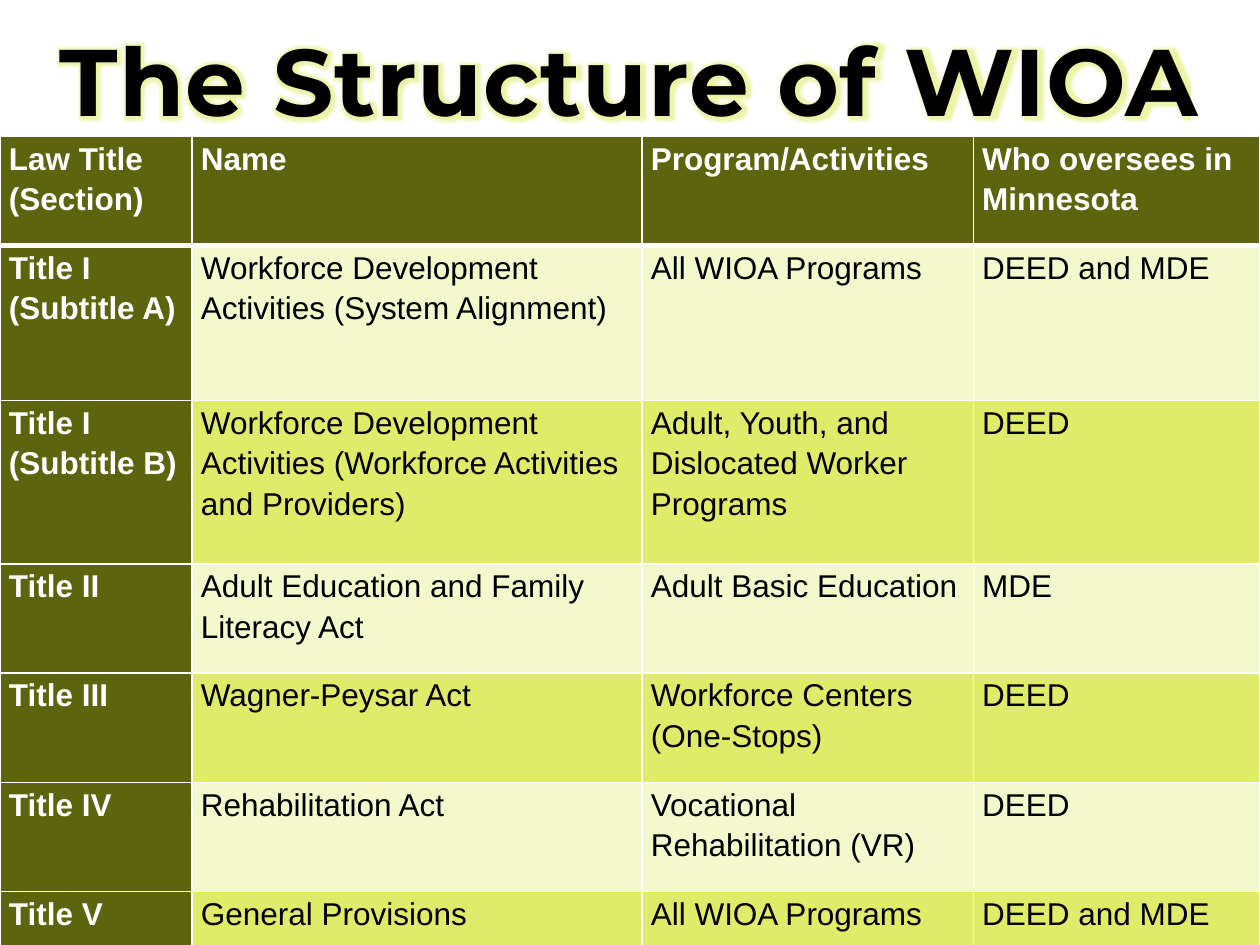
from dataclasses import dataclass

from lxml.etree import SubElement
from pptx import Presentation
from pptx.dml.color import RGBColor
from pptx.enum.text import MSO_ANCHOR, PP_ALIGN
from pptx.oxml.ns import qn
from pptx.util import Cm, Pt


@dataclass(frozen=True)
class Theme:
    title_font: str = "Montserrat"
    body_font: str = "Arial"
    title_size: float = 54
    body_size: float = 18
    line_spacing: float = 1.15
    black: str = "000000"
    white: str = "FFFFFF"
    olive: str = "5C650D"
    pale: str = "F4F9CD"
    lime: str = "DFEC69"


THEME = Theme()

COLUMN_WIDTHS = [3.87, 9.07, 6.68, 5.78]
ROW_HEIGHTS = [2.2, 3.12, 3.3, 2.2, 2.2, 2.2, 1.09]
ROWS = [
    ["Law Title (Section)", "Name", "Program/Activities", "Who oversees in Minnesota"],
    ["Title I (Subtitle A)", "Workforce Development Activities (System Alignment)",
     "All WIOA Programs", "DEED and MDE"],
    ["Title I (Subtitle B)",
     "Workforce Development Activities (Workforce Activities and Providers)",
     "Adult, Youth, and Dislocated Worker Programs", "DEED"],
    ["Title II", "Adult Education and Family Literacy Act", "Adult Basic Education", "MDE"],
    ["Title III", "Wagner-Peysar Act", "Workforce Centers (One-Stops)", "DEED"],
    ["Title IV", "Rehabilitation Act", "Vocational Rehabilitation (VR)", "DEED"],
    ["Title V", "General Provisions", "All WIOA Programs", "DEED and MDE"],
]


def add_span(para, text, font, size, color, bold):
    span = para.add_run()
    span.text = text
    span.font.name = font
    span.font.size = Pt(size)
    span.font.bold = bold
    span.font.color.rgb = RGBColor.from_string(color)
    return span


def add_glow(span, color, radius):
    """Put a soft glow right after the text fill, where the schema wants it."""
    properties = span.font._element if hasattr(span.font, "_element") else span._r.get_or_add_rPr()
    effects = SubElement(properties, qn("a:effectLst"))
    glow = SubElement(effects, qn("a:glow"), rad=str(Pt(radius)))
    tint = SubElement(glow, qn("a:srgbClr"), val=color)
    SubElement(tint, qn("a:alpha"), val="60000")
    properties.find(qn("a:solidFill")).addnext(effects)


def add_title(page, text):
    box = page.shapes.add_textbox(0, 0, Cm(25.4), Cm(3.18))
    frame = box.text_frame
    frame.word_wrap = True
    frame.vertical_anchor = MSO_ANCHOR.MIDDLE
    para = frame.paragraphs[0]
    para.alignment = PP_ALIGN.CENTER
    span = add_span(para, text, THEME.title_font, THEME.title_size, THEME.black, True)
    span._r.get_or_add_rPr().set("spc", "50")
    add_glow(span, THEME.lime, 8)


def set_borders(cell, bottom_width):
    properties = cell._tc.get_or_add_tcPr()
    for side, width in (("L", 1), ("R", 1), ("T", 1), ("B", bottom_width)):
        line = SubElement(properties, qn(f"a:ln{side}"), w=str(Pt(width)))
        fill = SubElement(line, qn("a:solidFill"))
        SubElement(fill, qn("a:srgbClr"), val=THEME.white)


def fill_cell(cell, text, row, column):
    is_heading = row == 0 or column == 0
    band = THEME.pale if row % 2 else THEME.lime
    cell.margin_left = cell.margin_right = Cm(0.18)
    cell.margin_top = cell.margin_bottom = 0
    # Borders come before the fill in the cell properties
    set_borders(cell, 3 if row == 0 else 1)
    cell.fill.solid()
    cell.fill.fore_color.rgb = RGBColor.from_string(THEME.olive if is_heading else band)
    para = cell.text_frame.paragraphs[0]
    para.line_spacing = THEME.line_spacing
    add_span(para, text, THEME.body_font, THEME.body_size,
             THEME.white if is_heading else THEME.black, is_heading)


def add_law_table(page):
    frame = page.shapes.add_table(len(ROWS), len(COLUMN_WIDTHS), 0, Cm(2.75),
                                  Cm(sum(COLUMN_WIDTHS)), Cm(sum(ROW_HEIGHTS)))
    table = frame.table
    table.first_col = True
    for column, width in zip(table.columns, COLUMN_WIDTHS):
        column.width = Cm(width)
    for table_row, height in zip(table.rows, ROW_HEIGHTS):
        table_row.height = Cm(height)
    for row, texts in enumerate(ROWS):
        for column, text in enumerate(texts):
            fill_cell(table.cell(row, column), text, row, column)


def main():
    deck = Presentation()
    deck.slide_width, deck.slide_height = Cm(25.4), Cm(19.05)
    page = deck.slides.add_slide(deck.slide_layouts[6])

    # Heading
    add_title(page, "The Structure of WIOA")

    # Titles of the law
    add_law_table(page)

    deck.save("out.pptx")


if __name__ == "__main__":
    main()
